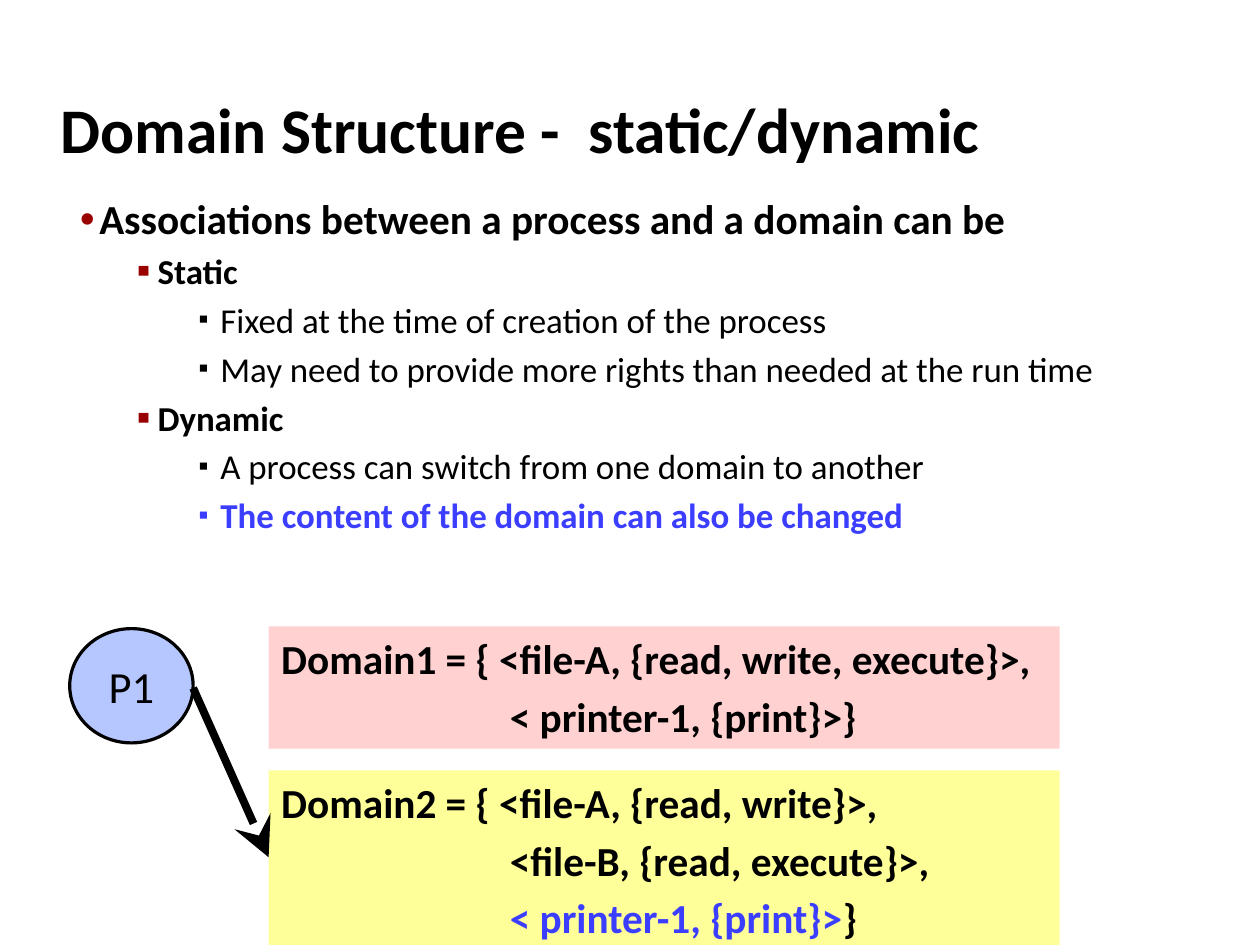
from dataclasses import dataclass

from lxml.etree import SubElement
from pptx import Presentation
from pptx.dml.color import RGBColor
from pptx.enum.shapes import MSO_CONNECTOR as Connector, MSO_SHAPE as Preset
from pptx.enum.text import MSO_ANCHOR as Anchor, MSO_AUTO_SIZE as AutoSize, PP_ALIGN as Align
from pptx.oxml.ns import qn
from pptx.util import Inches, Pt

CM_PER_INCH = 2.54


@dataclass(frozen=True)
class Theme:
    font: str = "Calibri"
    black: str = "000000"
    blue: str = "3B3EFF"
    bullet_red: str = "990000"
    red: str = "FF0000"
    yellow: str = "FFFF00"
    process_fill: str = "B6C7FF"
    title_size: int = 40
    process_size: int = 28
    heading_size: int = 26
    detail_size: int = 22


@dataclass(frozen=True)
class Level:
    size: int
    bold: bool
    left: float
    hang: float
    bullet: str
    bullet_percent: int
    bullet_color: str = ""


def apply_format(target, values):
    for name, value in values.items():
        setattr(target, name, value)


def add_xml(parent, tag, **attributes):
    return SubElement(parent, qn(tag), attributes)


class SlideBuilder:
    def __init__(self, slide, theme):
        self.slide = slide
        self.theme = theme

    def format_frame(self, shape, margin_x, margin_y, **values):
        frame = shape.text_frame
        apply_format(frame, {
            "word_wrap": True,
            "margin_left": Inches(margin_x), "margin_right": Inches(margin_x),
            "margin_top": Inches(margin_y), "margin_bottom": Inches(margin_y),
            **values,
        })
        return frame

    def add_text(self, paragraph, text, size, bold=False, color=None):
        run = paragraph.add_run()
        run.text = text
        apply_format(run.font, {"name": self.theme.font, "size": Pt(size), "bold": bold})
        run.font.color.rgb = RGBColor.from_string(color or self.theme.black)

    def add_paragraph(self, frame, index, size):
        paragraph = frame.add_paragraph() if index else frame.paragraphs[0]
        apply_format(paragraph, {"alignment": Align.LEFT, "space_before": Pt(size * 0.2)})
        return paragraph

    def indent(self, paragraph, left, hang=0):
        properties = paragraph._p.get_or_add_pPr()
        properties.set("marL", str(Inches(left)))
        properties.set("indent", str(Inches(-hang)))
        return properties

    def add_title(self, box, text):
        shape = self.slide.shapes.add_textbox(*map(Inches, box))
        frame = self.format_frame(shape, 0.1, 0.05, vertical_anchor=Anchor.BOTTOM)
        paragraph = frame.paragraphs[0]
        paragraph.line_spacing = 0.42
        self.add_text(paragraph, text, self.theme.title_size, True)

    def add_outline(self, box, levels, items):
        shape = self.slide.shapes.add_textbox(*map(Inches, box))
        frame = self.format_frame(shape, 0.1, 0.05)
        for index, (depth, text, *emphasis) in enumerate(items):
            level = levels[depth]
            color = emphasis[0] if emphasis else self.theme.black
            paragraph = self.add_paragraph(frame, index, level.size)
            properties = self.indent(paragraph, level.left, level.hang)
            bullet_color = add_xml(properties, "a:buClr")
            add_xml(bullet_color, "a:srgbClr", val=level.bullet_color or color)
            add_xml(properties, "a:buSzPct", val=str(level.bullet_percent * 1000))
            add_xml(properties, "a:buFont", typeface=self.theme.font)
            add_xml(properties, "a:buChar", char=level.bullet)
            self.add_text(paragraph, text, level.size, level.bold or bool(emphasis), color)

    def add_preset(self, preset, box, fill):
        shape = self.slide.shapes.add_shape(preset, *map(Inches, box))
        shape.shadow.inherit = False
        shape.fill.solid()
        shape.fill.fore_color.rgb = RGBColor.from_string(fill)
        return shape

    def add_domain(self, box, fill, opacity, lines):
        shape = self.add_preset(Preset.RECTANGLE, box, fill)
        shape.line.fill.background()
        fill_color = shape._element.spPr.find(qn("a:solidFill")).find(qn("a:srgbClr"))
        add_xml(fill_color, "a:alpha", val=str(opacity * 1000))
        frame = self.format_frame(shape, 0.11, 0.06, vertical_anchor=Anchor.TOP,
                                  auto_size=AutoSize.SHAPE_TO_FIT_TEXT)
        size = self.theme.heading_size
        for index, runs in enumerate(lines):
            paragraph = self.add_paragraph(frame, index, size)
            self.indent(paragraph, 2 if index else 0)
            for text, color in runs:
                self.add_text(paragraph, text, size, True, color)

    def add_process(self, box, text):
        shape = self.add_preset(Preset.OVAL, box, self.theme.process_fill)
        shape.line.color.rgb = RGBColor.from_string(self.theme.black)
        shape.line.width = Pt(2)
        frame = self.format_frame(shape, 0.1, 0.05, vertical_anchor=Anchor.MIDDLE)
        paragraph = frame.paragraphs[0]
        paragraph.alignment = Align.CENTER
        self.add_text(paragraph, text, self.theme.process_size)

    def add_arrow(self, start, end):
        arrow = self.slide.shapes.add_connector(
            Connector.STRAIGHT, *map(Inches, (*start, *end)))
        arrow.line.color.rgb = RGBColor.from_string(self.theme.black)
        arrow.line.width = Pt(5)
        add_xml(arrow.line._get_or_add_ln(), "a:tailEnd", type="stealth", w="lg", len="lg")
        add_xml(arrow._element.spPr, "a:effectLst")


def main():
    theme = Theme()
    presentation = Presentation()
    presentation.slide_width = Inches(28 / CM_PER_INCH)
    presentation.slide_height = Inches(21 / CM_PER_INCH)
    builder = SlideBuilder(presentation.slides.add_slide(presentation.slide_layouts[6]), theme)

    builder.add_title((0.43, 1.06, 9.15, 0.39), "Domain Structure -  static/dynamic")
    levels = (
        Level(theme.heading_size, True, 0.29, 0.17, "●", 60, theme.bullet_red),
        Level(theme.detail_size, True, 0.8, 0.18, "▪", 110, theme.bullet_red),
        Level(theme.detail_size, False, 1.35, 0.19, "▪", 80),
    )
    builder.add_outline((0.48, 1.64, 9.52, 3.65), levels, (
        (0, "Associations between a process and a domain can be"),
        (1, "Static"),
        (2, "Fixed at the time of creation of the process"),
        (2, "May need to provide more rights than needed at the run time"),
        (1, "Dynamic"),
        (2, "A process can switch from one domain to another"),
        (2, "The content of the domain can also be changed", theme.blue),
    ))
    builder.add_domain((2.35, 5.48, 6.92, 1.07), theme.red, 18, (
        [("Domain1 = { <file-A, {read, write, execute}>,", theme.black)],
        [("< printer-1, {print}>}", theme.black)],
    ))
    builder.add_domain((2.35, 6.74, 6.92, 1.6), theme.yellow, 40, (
        [("Domain2 = { <file-A, {read, write}>,", theme.black)],
        [("<file-B, {read, execute}>,", theme.black)],
        [("< printer-1, {print}>", theme.blue), ("}", theme.black)],
    ))
    builder.add_process((0.61, 5.5, 1.08, 1), "P1")
    builder.add_arrow((1.69, 6.02), (2.35, 7.5))
    presentation.save("out.pptx")


if __name__ == "__main__":
    main()
